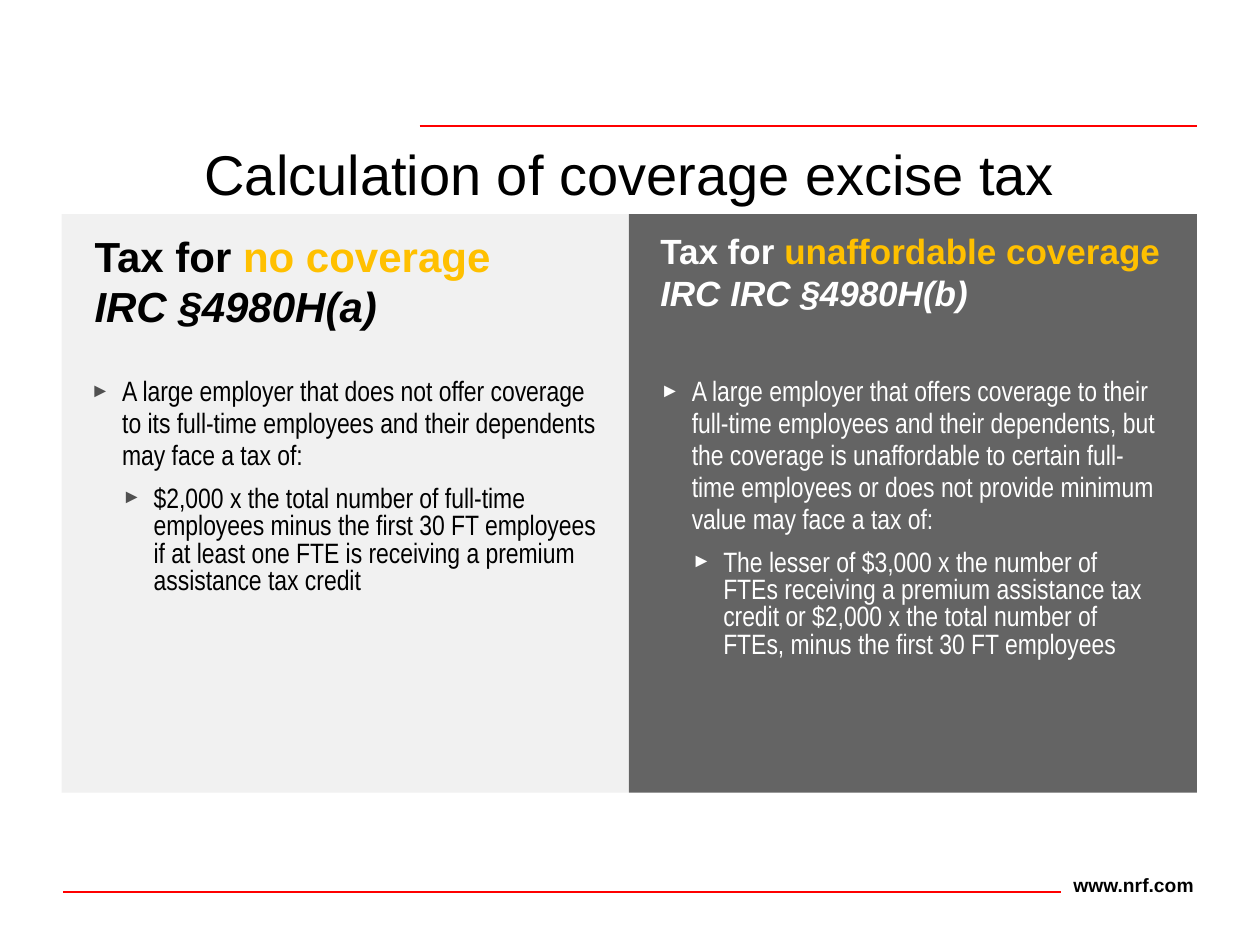
from dataclasses import dataclass

from lxml.etree import SubElement
from pptx import Presentation
from pptx.dml.color import RGBColor
from pptx.enum.shapes import MSO_CONNECTOR as Connector, MSO_SHAPE as Preset
from pptx.enum.text import MSO_ANCHOR as Anchor, PP_ALIGN as Align
from pptx.oxml.ns import qn
from pptx.slide import Slide
from pptx.text.text import TextFrame
from pptx.util import Inches, Pt

BLACK = RGBColor(0x00, 0x00, 0x00)
WHITE = RGBColor(0xFF, 0xFF, 0xFF)
RED = RGBColor(0xFF, 0x00, 0x00)
GOLD = RGBColor(0xFF, 0xC0, 0x00)
PALE_GREY = RGBColor(0xF1, 0xF1, 0xF1)
DARK_GREY = RGBColor(0x64, 0x64, 0x64)
BULLET_GREY = RGBColor(0x50, 0x50, 0x50)

PANEL_TOP, PANEL_HEIGHT = 1.7, 4.59
BULLET_TOP, BULLET_INDENT = 2.98, 0.25


@dataclass(frozen=True)
class Area:
    left: float
    top: float
    width: float
    height: float


@dataclass(frozen=True)
class Span:
    text: str
    color: RGBColor
    italic: bool = False


@dataclass(frozen=True)
class Panel:
    left: float
    width: float
    fill: RGBColor
    text_color: RGBColor
    bullet_color: RGBColor
    heading_area: Area
    heading_size: int
    heading: list[list[Span]]
    bullet_area: Area
    condition: str
    amount: str


PANELS = [
    Panel(
        0.49, 4.5, PALE_GREY, BLACK, BULLET_GREY,
        Area(0.75, 1.83, 3.85, 0.81), 24,
        [
            [Span("Tax for ", BLACK), Span("no coverage", GOLD)],
            [Span("IRC §4980H(a)", BLACK, italic=True)],
        ],
        Area(0.72, BULLET_TOP, 4.03, 1.78),
        "A large employer that does not offer coverage to its full-time employees "
        "and their dependents may face a tax of:",
        "$2,000 x the total number of full-time employees minus the first 30 FT "
        "employees if at least one FTE is receiving a premium assistance tax credit",
    ),
    Panel(
        4.99, 4.51, DARK_GREY, WHITE, WHITE,
        Area(5.24, 1.82, 4.15, 0.67), 20,
        [
            [
                Span("Tax for ", WHITE),
                Span("unaffordable coverage ", GOLD),
                Span("IRC IRC §4980H(b)", WHITE, italic=True),
            ],
        ],
        Area(5.24, BULLET_TOP, 3.95, 2.29),
        "A large employer that offers coverage to their full-time employees and "
        "their dependents, but the coverage is unaffordable to certain full-time "
        "employees or does not provide minimum value may face a tax of:",
        "The lesser of $3,000 x the number of FTEs receiving a premium assistance "
        "tax credit or $2,000 x the total number of FTEs, minus the first 30 FT "
        "employees",
    ),
]


def add_rule(page: Slide, left: float, right: float, top: float) -> None:
    rule = page.shapes.add_connector(
        Connector.STRAIGHT, Inches(left), Inches(top), Inches(right), Inches(top)
    )
    rule.line.color.rgb = RED
    rule.line.width = Pt(1)
    SubElement(rule._element.spPr, qn("a:effectLst"))


def add_text_box(page: Slide, area: Area, inset: bool = False) -> TextFrame:
    box = page.shapes.add_textbox(
        Inches(area.left), Inches(area.top), Inches(area.width), Inches(area.height)
    )
    frame = box.text_frame
    frame.word_wrap = True
    if not inset:
        frame.margin_left = frame.margin_right = Inches(0)
        frame.margin_top = frame.margin_bottom = Inches(0)
    return frame


def add_label(page: Slide, area: Area, text: str, size: int, bold: bool) -> TextFrame:
    frame = add_text_box(page, area, inset=True)
    frame.text = text
    font = frame.paragraphs[0].runs[0].font
    font.name, font.size, font.bold = "Arial", Pt(size), bold
    font.color.rgb = BLACK
    return frame


def add_heading(page: Slide, panel: Panel) -> None:
    frame = add_text_box(page, panel.heading_area)
    for index, spans in enumerate(panel.heading):
        para = frame.add_paragraph() if index else frame.paragraphs[0]
        for span in spans:
            run = para.add_run()
            run.text = span.text
            font = run.font
            font.name, font.size, font.bold = "Arial", Pt(panel.heading_size), True
            font.italic = span.italic
            font.color.rgb = span.color


def add_bullets(page: Slide, panel: Panel) -> None:
    frame = add_text_box(page, panel.bullet_area)
    frame.text = f"{panel.condition}\n{panel.amount}"
    for level, (para, spacing) in enumerate(zip(frame.paragraphs, (18.2, 15.6))):
        para.level = level
        para.line_spacing = Pt(spacing)
        if level:
            para.space_before = Pt(9)
        props = para._p.get_or_add_pPr()
        props.set("marL", str(Inches(BULLET_INDENT * (level + 1))))
        props.set("indent", str(-Inches(BULLET_INDENT)))
        color = SubElement(props, qn("a:buClr"))
        SubElement(color, qn("a:srgbClr"), val=str(panel.bullet_color))
        SubElement(props, qn("a:buSzPct"), val="70000")
        SubElement(props, qn("a:buFont"), typeface="Arial")
        SubElement(props, qn("a:buChar"), char="►")
        font = para.runs[0].font
        font.name, font.size = "Arial Narrow", Pt(16)
        font.color.rgb = panel.text_color


def add_panel(page: Slide, panel: Panel) -> None:
    background = page.shapes.add_shape(
        Preset.RECTANGLE,
        Inches(panel.left), Inches(PANEL_TOP), Inches(panel.width), Inches(PANEL_HEIGHT),
    )
    background.shadow.inherit = False
    background.fill.solid()
    background.fill.fore_color.rgb = panel.fill
    background.line.fill.background()
    add_heading(page, panel)
    add_bullets(page, panel)


def main() -> None:
    deck = Presentation()
    deck.slide_width, deck.slide_height = Inches(10), Inches(7.5)
    page = deck.slides.add_slide(deck.slide_layouts[6])

    add_rule(page, 3.33, 9.5, 1)
    add_rule(page, 0.5, 8.42, 7.08)
    add_label(page, Area(8.42, 6.88, 1.25, 0.28), "www.nrf.com", 11, bold=True)

    title = add_label(
        page, Area(0.5, 1.08, 9, 0.58), "Calculation of coverage excise tax", 32, bold=False
    )
    title.vertical_anchor = Anchor.MIDDLE
    title.paragraphs[0].alignment = Align.CENTER

    for panel in PANELS:
        add_panel(page, panel)

    deck.save("out.pptx")


if __name__ == "__main__":
    main()
